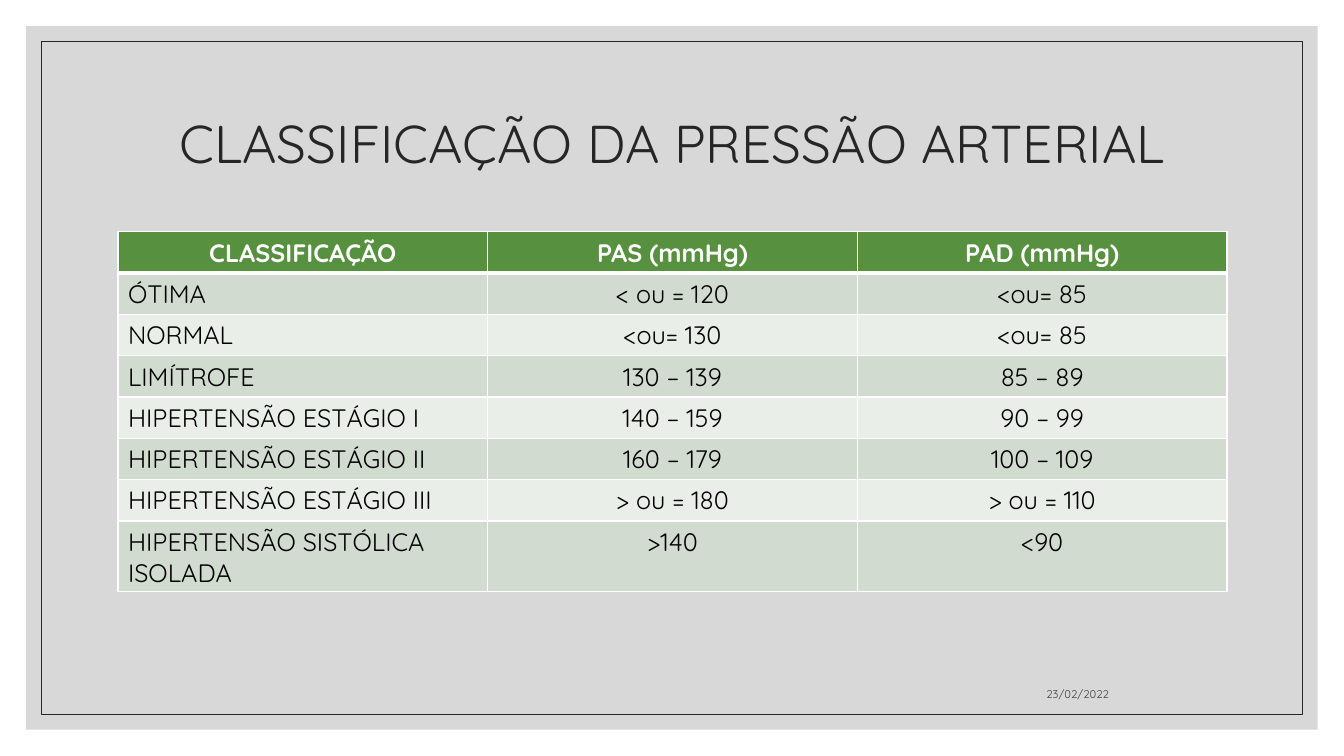
"""Build the blood pressure classification slide."""
from lxml.etree import SubElement
from pptx import Presentation
from pptx.dml.color import RGBColor
from pptx.enum.shapes import MSO_SHAPE
from pptx.enum.text import MSO_ANCHOR, PP_ALIGN
from pptx.oxml.ns import qn
from pptx.util import Inches, Pt

TITLE = "CLASSIFICAÇÃO DA PRESSÃO ARTERIAL"
DATE = "23/02/2022"
ROWS = [
    ("CLASSIFICAÇÃO", "PAS (mmHg)", "PAD (mmHg)"),
    ("ÓTIMA", "< ou = 120", "<ou= 85"),
    ("NORMAL", "<ou= 130", "<ou= 85"),
    ("LIMÍTROFE", "130 – 139", "85 – 89"),
    ("HIPERTENSÃO ESTÁGIO I", "140 – 159", "90 – 99"),
    ("HIPERTENSÃO ESTÁGIO II", "160 – 179", "100 – 109"),
    ("HIPERTENSÃO ESTÁGIO III", "> ou = 180", "> ou = 110"),
    ("HIPERTENSÃO SISTÓLICA ISOLADA", ">140", "<90"),
]
FONT = "Quicksand"
HEADER, BANDS = "57903F", ("EAEEE8", "D1DBCF")
WIDTH, HEIGHT = 13.33, 7.5
LEFT, TABLE_TOP, TABLE_W, ROW_H = 1.17, 2.3, 11, 0.41


def color(value):
    return RGBColor.from_string(value)


def write(tf, text, align, ink, **formats):
    p = tf.paragraphs[0]
    p.alignment = align
    r = p.add_run()
    r.text = text
    r.font.color.rgb = color(ink)
    for name, value in {"name": FONT, **formats}.items():
        setattr(r.font, name, value)
    return p


def add_text(s, box, anchor, *content, **formats):
    tf = s.shapes.add_textbox(*map(Inches, box)).text_frame
    tf.word_wrap = True
    tf.vertical_anchor = anchor
    return write(tf, *content, **formats)


def add_frame(s, margin):
    size = (margin, margin, WIDTH - 2 * margin, HEIGHT - 2 * margin)
    sp = s.shapes.add_shape(MSO_SHAPE.RECTANGLE, *map(Inches, size))
    sp.shadow.inherit = False
    return sp


def set_borders(cell, widths):
    tc_pr = cell._tc.get_or_add_tcPr()
    for i, (side, points) in enumerate(widths.items()):
        ln = tc_pr.makeelement(qn(f"a:{side}"), {"w": str(Pt(points))})
        fill = SubElement(ln, qn("a:solidFill"))
        SubElement(fill, qn("a:srgbClr"), val="FFFFFF")
        tc_pr.insert(i, ln)


def add_table(s):
    size = (LEFT, TABLE_TOP, TABLE_W, ROW_H * len(ROWS))
    table = s.shapes.add_table(len(ROWS), len(ROWS[0]), *map(Inches, size)).table
    for i, row in enumerate(ROWS):
        for j, text in enumerate(row):
            cell = table.cell(i, j)
            cell.fill.solid()
            cell.fill.fore_color.rgb = color(BANDS[i % 2] if i else HEADER)
            set_borders(cell, {"lnL": 1, "lnR": 1, "lnT": 3 if i == 1 else 1,
                               "lnB": 1 if i else 3})
            align = PP_ALIGN.LEFT if i and j == 0 else PP_ALIGN.CENTER
            write(cell.text_frame, text, align, "000000" if i else "FFFFFF",
                  size=Pt(18), bold=i == 0)


def main():
    prs = Presentation()
    prs.slide_width, prs.slide_height = Inches(WIDTH), Inches(HEIGHT)
    s = prs.slides.add_slide(prs.slide_layouts[6])

    panel = add_frame(s, 0.26)
    panel.fill.solid()
    panel.fill.fore_color.rgb = color("BFBFBF")
    panel.line.fill.background()
    tint = panel._element.spPr.find(qn("a:solidFill")).find(qn("a:srgbClr"))
    SubElement(tint, qn("a:alpha"), val="60000")

    border = add_frame(s, 0.41)
    border.fill.background()
    border.line.color.rgb = color("262626")
    border.line.width = Pt(0.5)

    p = add_text(s, (LEFT, 0.7, TABLE_W, 1.5), MSO_ANCHOR.MIDDLE,
                 TITLE, PP_ALIGN.CENTER, "262626", size=Pt(38))
    p.line_spacing = 0.9
    add_table(s)
    add_text(s, (7.94, 6.6, 3.16, 0.4), MSO_ANCHOR.BOTTOM,
             DATE, PP_ALIGN.RIGHT, "404040", size=Pt(8))
    prs.save("out.pptx")


if __name__ == "__main__":
    main()
